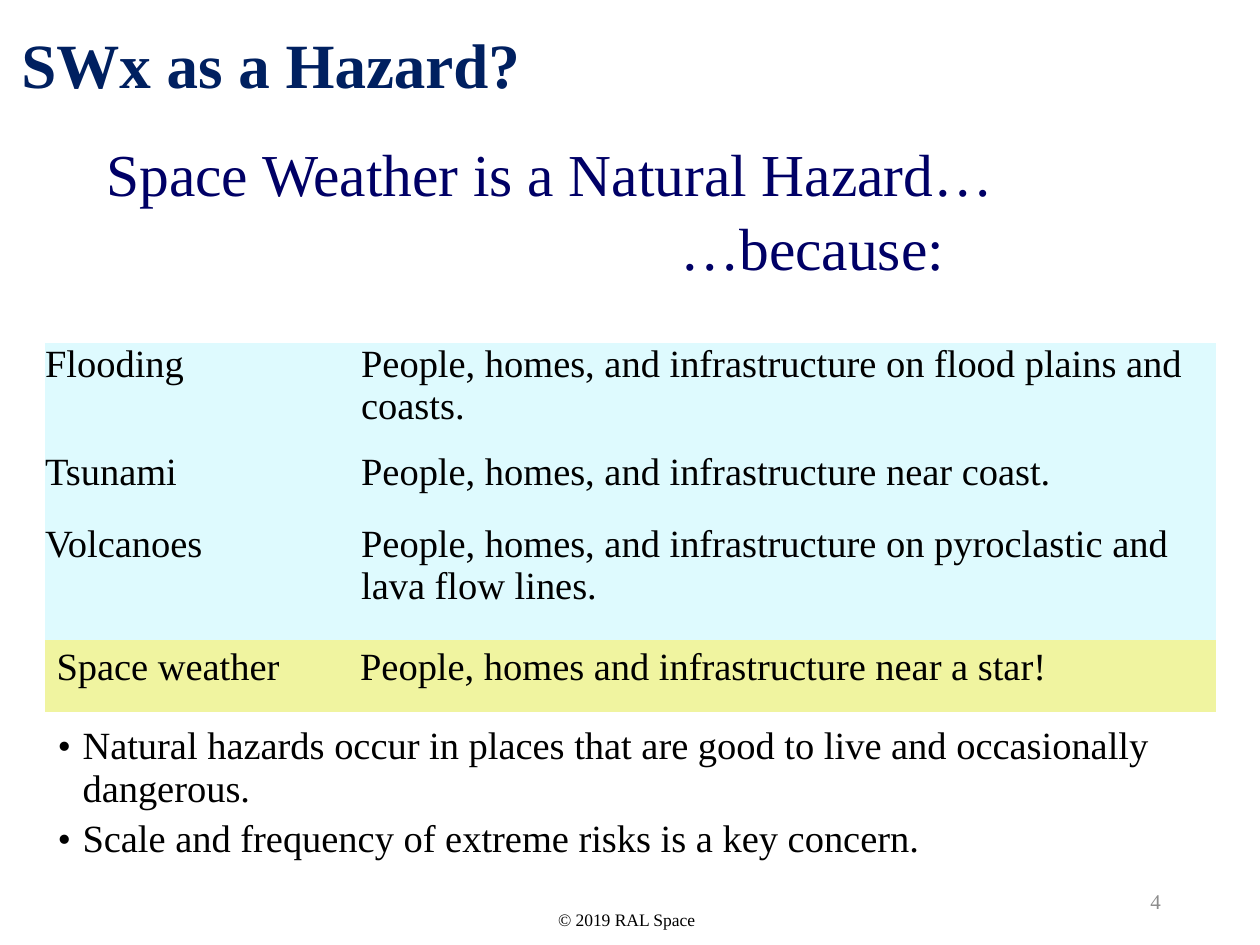
from lxml import etree
from pptx import Presentation
from pptx.dml.color import RGBColor
from pptx.enum import text
from pptx.oxml import ns
from pptx.util import Cm, Pt

FONT = "Times New Roman"
COLORS = {
    "title": "002060",
    "statement": "000066",
    "body": "000000",
    "number": "8C8C8C",
    "hazard": "DEFAFE",
    "weather": "F0F4A0",
}
NO_STYLE = "{2D5ABB26-0587-4C30-8999-92F81FD0307C}"
TABLE_LEFT, TABLE_WIDTH, LABEL_WIDTH = 0.91, 23.6, 6.12
COLUMNS = [LABEL_WIDTH, TABLE_WIDTH - LABEL_WIDTH]
HAZARDS = [
    ("Flooding", "People, homes, and infrastructure on flood plains and coasts."),
    ("Tsunami", "People, homes, and infrastructure near coast."),
    ("Volcanoes", "People, homes, and infrastructure on pyroclastic and lava flow lines."),
]
WEATHER = [("Space weather", "People, homes and infrastructure near a star!")]
CONCERNS = [
    "Natural hazards occur in places that are good to live and occasionally dangerous.",
    "Scale and frequency of extreme risks is a key concern.",
]


def format_runs(tf, size, color, bold=False):
    for p in tf.paragraphs:
        for r in p.runs:
            r.font.name = FONT
            r.font.size = Pt(size)
            r.font.bold = bold
            r.font.color.rgb = RGBColor.from_string(COLORS[color])


def add_text(s, box, content, size, color, bold=False, anchor=text.MSO_ANCHOR.TOP):
    tf = s.shapes.add_textbox(*map(Cm, box)).text_frame
    tf.word_wrap = True
    tf.vertical_anchor = anchor
    tf.text = content
    format_runs(tf, size, color, bold)
    return tf


def add_title(s, box):
    tf = add_text(s, box, "SWx as a Hazard?", 36, "title", bold=True)
    tf.margin_top, tf.margin_bottom = Cm(0.2), 0
    tf.paragraphs[0].line_spacing = 0.9


def add_statement(s, box):
    lines = "Space Weather is a Natural Hazard…\n…because:"
    tf = add_text(s, box, lines, 34, "statement")
    p = tf.paragraphs[1]
    p.space_before = Pt(1.5)
    p._p.get_or_add_pPr().set("marL", str(Cm(11.56)))


def add_footer(s, box, content, size, color, align):
    tf = add_text(s, box, content, size, color, anchor=text.MSO_ANCHOR.MIDDLE)
    tf.paragraphs[0].alignment = align


def add_table(s, left, top, columns, heights):
    frame = s.shapes.add_table(
        len(heights), len(columns),
        Cm(left), Cm(top), Cm(sum(columns)), Cm(sum(heights)),
    )
    table = frame.table
    table.first_row = table.horz_banding = False
    table._tbl.tblPr.find(ns.qn("a:tableStyleId")).text = NO_STYLE
    for column, width in zip(table.columns, columns):
        column.width = Cm(width)
    for row, height in zip(table.rows, heights):
        row.height = Cm(height)
    return table


def add_hazard_table(s, top, heights, rows, fill, margins):
    table = add_table(s, TABLE_LEFT, top, COLUMNS, heights)
    for i, row in enumerate(rows):
        for j, content in enumerate(row):
            cell = table.cell(i, j)
            cell.margin_left = Cm(margins["left"][j])
            cell.margin_right = Cm(margins["right"])
            cell.margin_top = cell.margin_bottom = Cm(margins["vertical"])
            cell.fill.solid()
            cell.fill.fore_color.rgb = RGBColor.from_string(COLORS[fill])
            cell.text = content
            format_runs(cell.text_frame, 22, "body")


def add_concerns(s, top, height):
    cell = add_table(s, TABLE_LEFT, top, [TABLE_WIDTH], [height]).cell(0, 0)
    cell.fill.background()
    tf = cell.text_frame
    tf.text = "\n".join(CONCERNS)
    for i, p in enumerate(tf.paragraphs):
        if i:
            p.space_before = Pt(4.4)
        props = p._p.get_or_add_pPr()
        props.set("marL", str(Cm(0.5)))
        props.set("indent", str(Cm(-0.5)))
        etree.SubElement(props, ns.qn("a:buFont")).set("typeface", FONT)
        etree.SubElement(props, ns.qn("a:buChar")).set("char", "•")
    format_runs(tf, 22, "body")


def main():
    prs = Presentation()
    prs.slide_width, prs.slide_height = Cm(25.4), Cm(19.05)
    s = prs.slides.add_slide(prs.slide_layouts[6])
    add_title(s, (0.18, 0.48, 11.89, 1.4))
    add_footer(s, (17.93, 17.65, 5.72, 1.02), "4", 12, "number", text.PP_ALIGN.RIGHT)
    add_hazard_table(s, 6.91, [2.18, 1.45, 2.36], HAZARDS, "hazard",
                     {"left": [0, 0.25], "right": 0, "vertical": 0})
    add_hazard_table(s, 12.9, [1.45], WEATHER, "weather",
                     {"left": [0.23, 0.23], "right": 0.23, "vertical": 0.13})
    add_concerns(s, 14.5, 3.2)
    add_statement(s, (1.9, 2.64, 22.2, 3.5))
    add_footer(s, (11, 18.03, 3.4, 1.02), "© 2019 RAL Space", 10, "body", text.PP_ALIGN.LEFT)
    prs.save("out.pptx")


if __name__ == "__main__":
    main()
